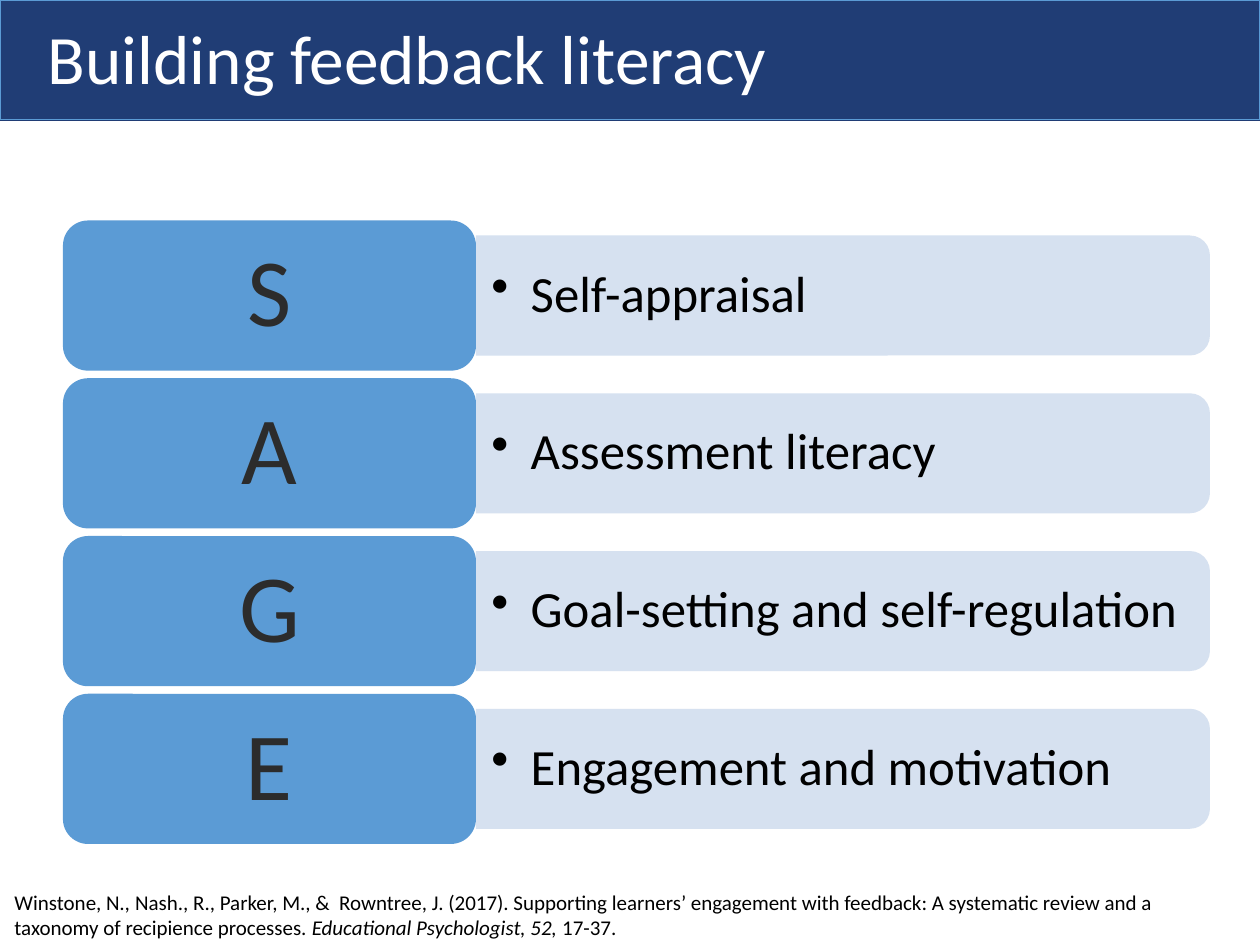
from lxml import etree
from pptx import Presentation
from pptx.dml.color import RGBColor
from pptx.enum import shapes, text
from pptx.oxml import ns
from pptx.util import Pt

COLORS = {"navy": "203D75", "blue": "5B9BD5", "pale": "D2DEEF",
          "white": "FFFFFF", "black": "000000", "charcoal": "2C2C2C"}


def write_text(shape, content, size, color, align=text.PP_ALIGN.LEFT,
               anchor=text.MSO_ANCHOR.MIDDLE, spacing=0.9,
               margins=(7.2, 3.6), bullet_indent=None):
    """Write (string, italic) runs, or one plain string, into a shape."""
    frame = shape.text_frame
    frame.word_wrap = True
    frame.auto_size = text.MSO_AUTO_SIZE.NONE
    frame.vertical_anchor = anchor
    frame.margin_left = frame.margin_right = Pt(margins[0])
    frame.margin_top = frame.margin_bottom = Pt(margins[1])
    paragraph = frame.paragraphs[0]
    paragraph.alignment = align
    paragraph.line_spacing = spacing
    if bullet_indent:
        properties = paragraph._p.get_or_add_pPr()
        properties.set("marL", str(Pt(bullet_indent)))
        properties.set("indent", str(-Pt(bullet_indent)))
        etree.SubElement(properties, ns.qn("a:buChar")).set("char", "•")
    runs = [(content, False)] if isinstance(content, str) else content
    for string, italic in runs:
        run = paragraph.add_run()
        run.text = string
        run.font.name = "Calibri"
        run.font.size = Pt(size)
        run.font.italic = italic
        run.font.color.rgb = RGBColor.from_string(COLORS[color])


def add_filled(kind, left, top, width, height, color):
    shape = slide.shapes.add_shape(kind, Pt(left), Pt(top), Pt(width), Pt(height))
    shape.shadow.inherit = False
    shape.fill.solid()
    shape.fill.fore_color.rgb = RGBColor.from_string(COLORS[color])
    shape.line.fill.background()
    return shape


presentation = Presentation()
presentation.slide_width, presentation.slide_height = Pt(720), Pt(540)
slide = presentation.slides.add_slide(presentation.slide_layouts[5])

# Header band with a rule beneath it
band = add_filled(shapes.MSO_SHAPE.RECTANGLE, 0, 0, 720, 68.4, "navy")
band.line.color.rgb = RGBColor.from_string(COLORS["blue"])
band.line.width = Pt(0.5)
rule = slide.shapes.add_connector(shapes.MSO_CONNECTOR.STRAIGHT,
                                  Pt(0), Pt(69), Pt(720), Pt(69))
rule.line.color.rgb = RGBColor.from_string(COLORS["navy"])
rule.line.width = Pt(0.5)
etree.SubElement(rule.element.spPr, ns.qn("a:effectLst"))

# Title, brought in front of the band
title = slide.shapes.title
title.left, title.top, title.width, title.height = Pt(20), Pt(19.5), Pt(460), Pt(32.4)
write_text(title, "Building feedback literacy", 39.6, "white")
title.element.getparent().append(title.element)

# SAGE rows: a letter tile and a bar rounded on its right side
row_top, row_pitch = 126, 90.15
tile_left, tile_width, tile_height = 36, 236, 85.8
bar_left, bar_width, bar_height = tile_left + tile_width, 419.4, 68.6
rows = [("S", "Self-appraisal"),
        ("A", "Assessment literacy"),
        ("G", "Goal-setting and self-regulation"),
        ("E", "Engagement and motivation")]
for index, (letter, meaning) in enumerate(rows):
    top = row_top + index * row_pitch
    middle = top + tile_height / 2

    # The bar is an upright shape turned a quarter about its centre
    bar = add_filled(shapes.MSO_SHAPE.ROUND_2_SAME_RECTANGLE,
                     bar_left + (bar_width - bar_height) / 2, middle - bar_width / 2,
                     bar_height, bar_width, "pale")
    bar.rotation = 90
    color_element = bar.element.spPr.find(".//" + ns.qn("a:srgbClr"))
    etree.SubElement(color_element, ns.qn("a:alpha")).set("val", "90000")

    label = slide.shapes.add_textbox(Pt(bar_left), Pt(middle - 31), Pt(416), Pt(62))
    write_text(label, meaning, 29, "black", margins=(8.8, 4.4), bullet_indent=22.5)

    tile = add_filled(shapes.MSO_SHAPE.ROUNDED_RECTANGLE,
                      tile_left, top, tile_width, tile_height, "blue")
    write_text(tile, letter, 55, "charcoal", align=text.PP_ALIGN.CENTER,
               margins=(16.5, 8.25))

# Reference
reference = slide.shapes.add_textbox(Pt(1.2), Pt(504.7), Pt(705.6), Pt(51))
write_text(reference, [
    ("Winstone, N", False),
    (".,", True),
    (" Nash., R., Parker, M., &  Rowntree, J. (2017). Supporting learners’ engagement "
     "with feedback: A systematic review and a taxonomy of recipience processes. ", False),
    ("Educational Psychologist, 52, ", True),
    ("17-37.", False),
], 12, "black", anchor=text.MSO_ANCHOR.TOP, spacing=1.0)

presentation.save("out.pptx")
